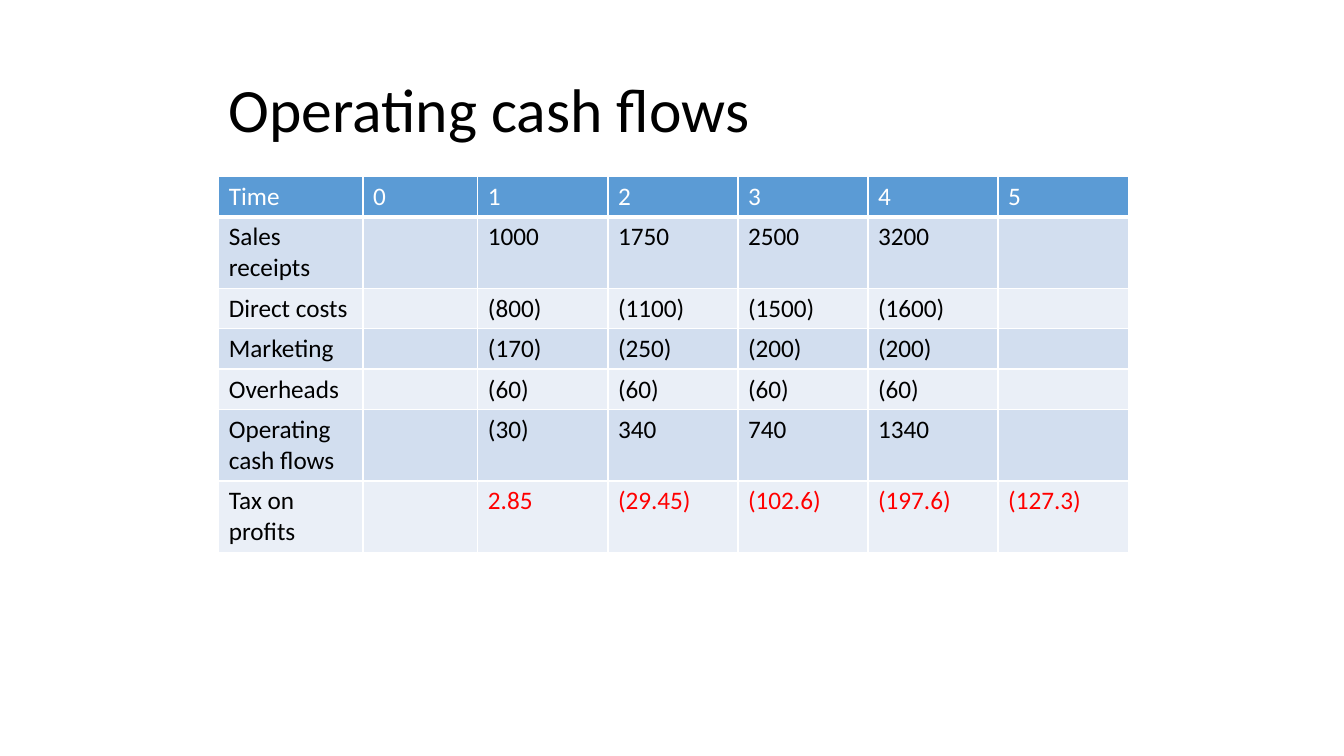
from lxml.etree import SubElement
from pptx import Presentation
from pptx.dml.color import RGBColor
from pptx.enum.text import MSO_ANCHOR
from pptx.oxml.ns import qn
from pptx.util import Inches, Pt

COLORS = {
    "header": "5B9BD5",
    "odd_row": "D2DEEF",
    "even_row": "EAEFF7",
    "rule": "FFFFFF",
    "header_text": "FFFFFF",
    "text": "000000",
    "tax": "FF0000",
}
FONT = "Calibri"
LEFT, WIDTH = 2.17, 9
COLUMN_WIDTHS = [1.43, 1.14] + [1.29] * 5
SINGLE_LINE, DOUBLE_LINE = 0.4, 0.71
CASH_FLOWS = [
    (SINGLE_LINE, ["Time", "0", "1", "2", "3", "4", "5"]),
    (DOUBLE_LINE, ["Sales receipts", "", "1000", "1750", "2500", "3200", ""]),
    (SINGLE_LINE, ["Direct costs", "", "(800)", "(1100)", "(1500)", "(1600)", ""]),
    (SINGLE_LINE, ["Marketing", "", "(170)", "(250)", "(200)", "(200)", ""]),
    (SINGLE_LINE, ["Overheads", "", "(60)", "(60)", "(60)", "(60)", ""]),
    (DOUBLE_LINE, ["Operating cash flows", "", "(30)", "340", "740", "1340", ""]),
    (DOUBLE_LINE, ["Tax on profits", "", "2.85", "(29.45)", "(102.6)", "(197.6)", "(127.3)"]),
]


def style_font(paragraph, size, color):
    """Set the font of a whole paragraph."""
    font = paragraph.font
    font.name, font.size, font.bold = FONT, Pt(size), False
    font.color.rgb = RGBColor.from_string(COLORS[color])


def add_title(slide, wording):
    """Place the slide heading above the table."""
    title = slide.shapes.add_textbox(Inches(LEFT), Inches(0.68), Inches(WIDTH), Inches(0.87))
    frame = title.text_frame
    frame.word_wrap = True
    frame.vertical_anchor = MSO_ANCHOR.MIDDLE
    heading = frame.paragraphs[0]
    heading.text = wording
    heading.line_spacing = 0.9
    style_font(heading, 44, "text")


def rule_cell(cell, bottom_width):
    """Draw the white rules on the four sides of a cell."""
    properties = cell._tc.get_or_add_tcPr()
    widths = {"a:lnL": 1, "a:lnR": 1, "a:lnT": 1, "a:lnB": bottom_width}
    for side, width in widths.items():
        rule = SubElement(properties, qn(side), w=str(Pt(width)))
        fill = SubElement(rule, qn("a:solidFill"))
        SubElement(fill, qn("a:srgbClr"), val=COLORS["rule"])


def fill_cell(cell, wording, background, text_color, bottom_width):
    """Write one table cell with its rules and background."""
    cell.text = wording
    style_font(cell.text_frame.paragraphs[0], 18, text_color)
    rule_cell(cell, bottom_width)
    cell.fill.solid()
    cell.fill.fore_color.rgb = RGBColor.from_string(COLORS[background])


def cell_colors(row, column):
    """Return the background and text colours for a table position."""
    if row == 0:
        return "header", "header_text"
    is_tax_figure = row == len(CASH_FLOWS) - 1 and column > 0
    return "odd_row" if row % 2 else "even_row", "tax" if is_tax_figure else "text"


def add_cash_flow_table(slide):
    """Build the banded table of yearly cash flows."""
    height = sum(row_height for row_height, _ in CASH_FLOWS)
    table = slide.shapes.add_table(
        len(CASH_FLOWS), len(COLUMN_WIDTHS),
        Inches(LEFT), Inches(1.75), Inches(WIDTH), Inches(height),
    ).table
    for column, width in zip(table.columns, COLUMN_WIDTHS):
        column.width = Inches(width)
    for row, (row_height, entries) in enumerate(CASH_FLOWS):
        table.rows[row].height = Inches(row_height)
        for column, entry in enumerate(entries):
            background, text_color = cell_colors(row, column)
            fill_cell(table.cell(row, column), entry, background, text_color, 1 if row else 3)


def main():
    """Build and save the slide."""
    deck = Presentation()
    deck.slide_width, deck.slide_height = Inches(13.33), Inches(7.5)
    slide = deck.slides.add_slide(deck.slide_layouts[6])
    add_title(slide, "Operating cash flows")
    add_cash_flow_table(slide)
    deck.save("out.pptx")


if __name__ == "__main__":
    main()
